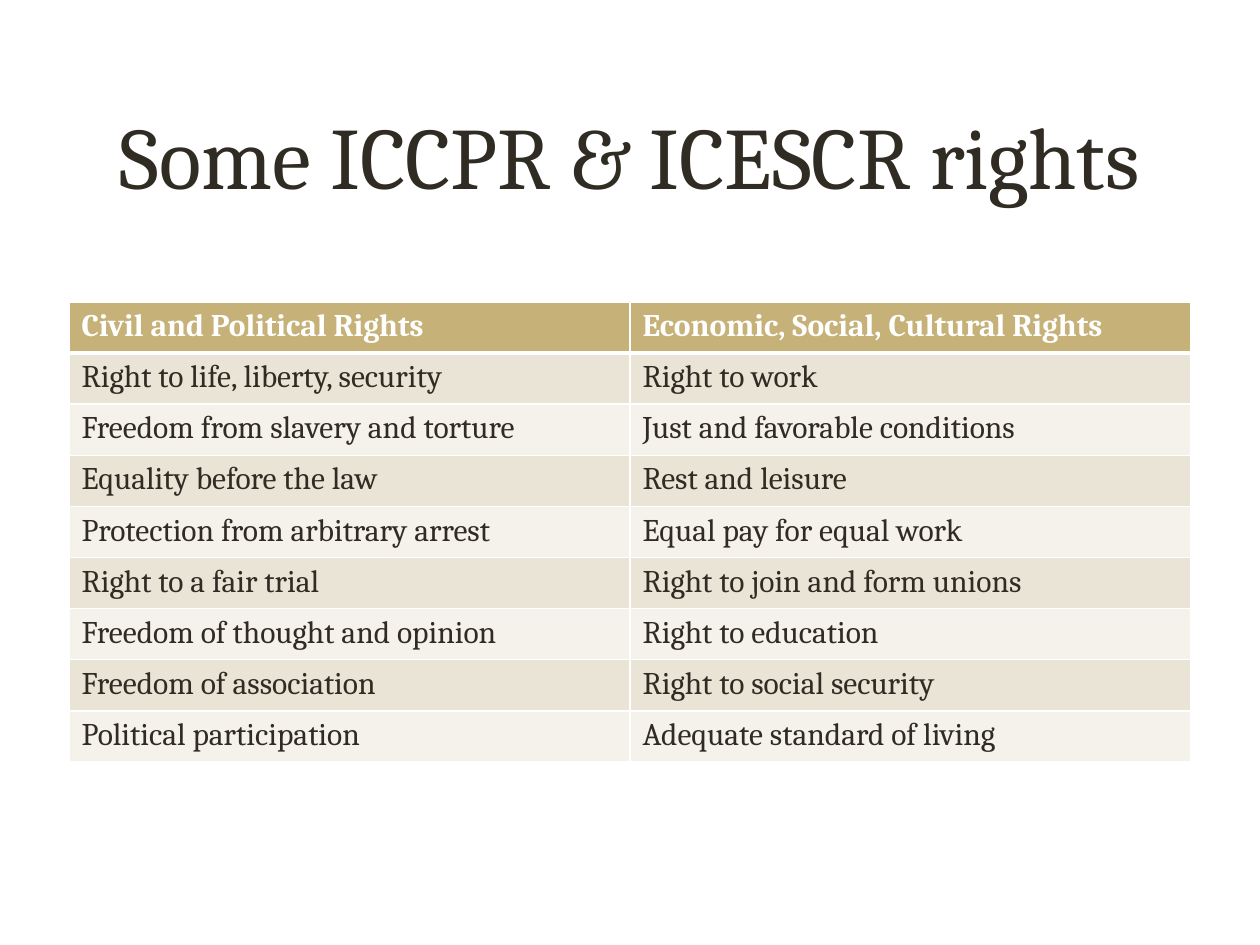
from lxml.etree import SubElement
from pptx import Presentation
from pptx.dml.color import RGBColor
from pptx.enum.text import MSO_ANCHOR, PP_ALIGN
from pptx.oxml.ns import qn
from pptx.util import Pt

PX = 914400 // 126
FONT = "Cambria"
COLORS = {
    "ink": "302C24",
    "white": "FFFFFF",
    "header": "C6B178",
    "odd": "EAE4D6",
    "even": "F5F2EC",
}
RIGHTS = [
    ("Civil and Political Rights", "Economic, Social, Cultural Rights"),
    ("Right to life, liberty, security", "Right to work"),
    ("Freedom from slavery and torture", "Just and favorable conditions"),
    ("Equality before the law", "Rest and leisure"),
    ("Protection from arbitrary arrest", "Equal pay for equal work"),
    ("Right to a fair trial", "Right to join and form unions"),
    ("Freedom of thought and opinion", "Right to education"),
    ("Freedom of association", "Right to social security"),
    ("Political participation", "Adequate standard of living"),
]


def add_text(paragraph, text, size, color, bold=False):
    run = paragraph.add_run()
    run.text = text
    run.font.name = FONT
    run.font.size = Pt(size)
    run.font.bold = bold
    run.font.color.rgb = RGBColor.from_string(COLORS[color])


def add_border(cell, side, width):
    line = SubElement(cell._tc.get_or_add_tcPr(), qn(f"a:ln{side}"), w=str(Pt(width)))
    fill = SubElement(line, qn("a:solidFill"))
    SubElement(fill, qn("a:srgbClr"), val=COLORS["white"])


prs = Presentation()
prs.slide_width = 1260 * PX
prs.slide_height = 945 * PX
slide = prs.slides.add_slide(prs.slide_layouts[6])

title = slide.shapes.add_textbox(69 * PX, 13 * PX, 1122 * PX, 200 * PX).text_frame
title.word_wrap = True
title.vertical_anchor = MSO_ANCHOR.BOTTOM
title.paragraphs[0].alignment = PP_ALIGN.CENTER
add_text(title.paragraphs[0], "Some ICCPR & ICESCR rights", 50, "ink")

rights_table = slide.shapes.add_table(
    len(RIGHTS), 2, 69 * PX, 302 * PX, 1122 * PX, 460 * PX
).table

for r, rights in enumerate(RIGHTS):
    is_header = r == 0
    band = "header" if is_header else "odd" if r % 2 else "even"
    for c, right in enumerate(rights):
        cell = rights_table.cell(r, c)
        add_border(cell, "L", 1)
        add_border(cell, "R", 1)
        add_border(cell, "T", 3 if r == 1 else 1)
        add_border(cell, "B", 3 if is_header else 1)
        cell.fill.solid()
        cell.fill.fore_color.rgb = RGBColor.from_string(COLORS[band])
        add_text(
            cell.text_frame.paragraphs[0],
            right,
            18,
            "white" if is_header else "ink",
            is_header,
        )

prs.save("out.pptx")
